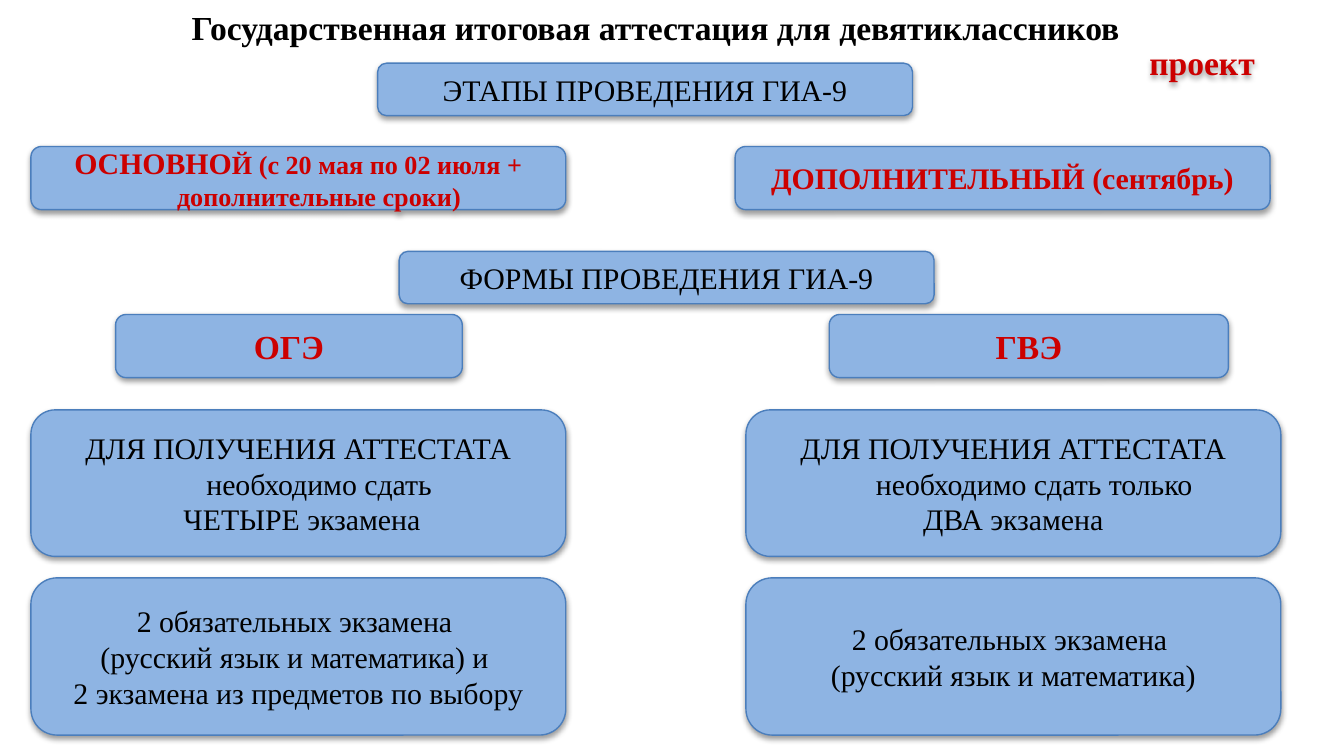
from dataclasses import dataclass

from lxml.etree import SubElement as Sub
from pptx import Presentation
from pptx.dml.color import RGBColor as Rgb
from pptx.enum.shapes import MSO_SHAPE as Kind
from pptx.enum.text import MSO_ANCHOR as Anchor, MSO_AUTO_SIZE as Fit, PP_ALIGN as Align
from pptx.oxml.ns import qn
from pptx.util import Inches, Pt


@dataclass(frozen=True)
class Theme:
    font: str = "Times New Roman"
    fill: Rgb = Rgb(0x8E, 0xB4, 0xE3)
    edge: Rgb = Rgb(0x4B, 0x7E, 0xBC)
    ink: Rgb = Rgb(0, 0, 0)
    red: Rgb = Rgb(0xCC, 0, 0)
    shade: str = "000000"
    small: int = 14
    body: int = 16
    head: int = 18


class Deck:
    def __init__(self, theme):
        self.theme = theme
        self.file = Presentation()
        self.file.slide_width = Inches(10)
        self.file.slide_height = Inches(10 * 9 / 16)
        self.slide = self.file.slides.add_slide(self.file.slide_layouts[5])

    def style(self, para, size, color, bold):
        para.alignment = Align.CENTER
        font = para.font
        font.name, font.size, font.bold = self.theme.font, Pt(size), bold
        font.color.rgb = color

    def title(self, text, *area):
        shape = self.slide.shapes.title
        shape.left, shape.top, shape.width, shape.height = map(Inches, area)
        frame = shape.text_frame
        frame.text = text
        frame.auto_size = Fit.NONE
        frame.vertical_anchor = Anchor.TOP
        self.style(frame.paragraphs[0], self.theme.head, self.theme.ink, True)

    def shadow(self, shape):
        """Give the shape a soft shadow straight below it."""
        shape.shadow.inherit = False
        effects = shape._element.spPr.find(qn("a:effectLst"))
        outer = Sub(effects, qn("a:outerShdw"), blurRad=str(Pt(3.1)),
                    dist=str(Pt(1.6)), dir="5400000", rotWithShape="0")
        color = Sub(outer, qn("a:srgbClr"), val=self.theme.shade)
        Sub(color, qn("a:alpha"), val="38000")

    def box(self, area, lines, size=None, strong=False, plain=False, tail=""):
        """Add a rounded box; tail is smaller text that ends the last line."""
        theme = self.theme
        shape = self.slide.shapes.add_shape(Kind.ROUNDED_RECTANGLE, *map(Inches, area))
        if plain:
            shape.fill.background()
            shape.line.fill.background()
        else:
            shape.fill.solid()
            shape.fill.fore_color.rgb = theme.fill
            shape.line.color.rgb = theme.edge
            shape.line.width = Pt(0.75)
        self.shadow(shape)
        frame = shape.text_frame
        frame.word_wrap = True
        frame.vertical_anchor = Anchor.MIDDLE
        frame.text = "\n".join(lines)
        for para in frame.paragraphs:
            self.style(para, size or theme.body, theme.red if strong else theme.ink, strong)
            props = para._p.get_or_add_pPr()
            props.set("marL", str(Inches(0.31)))
            props.set("indent", str(Inches(-0.31)))
        if tail:
            run = frame.paragraphs[-1].add_run()
            run.text = tail
            run.font.size = Pt(theme.small)


def main():
    theme = Theme()
    deck = Deck(theme)
    wide, low, mid = 3.98, 0.39, 0.47
    left, right = 0.23, 5.55

    deck.title("Государственная итоговая аттестация для девятиклассников", 0.31, 0, 9.14, 0.4)

    deck.box((2.81, 0.47, wide, low), ["ЭТАПЫ ПРОВЕДЕНИЯ ГИА-9"])
    deck.box((left, 1.09, wide, mid), ["ОСНОВНО"], strong=True,
             tail="Й (с 20 мая по 02 июля + дополнительные сроки)")
    deck.box((5.47, 1.09, wide, mid), ["ДОПОЛНИТЕЛЬНЫЙ (сентябрь)"], strong=True)

    deck.box((2.97, 1.87, wide, low), ["ФОРМЫ ПРОВЕДЕНИЯ ГИА-9"])
    for x, width, name in ((0.86, 2.58, "ОГЭ"), (6.17, 2.97, "ГВЭ")):
        deck.box((x, 2.34, width, mid), [name], theme.head, strong=True)

    need = "ДЛЯ ПОЛУЧЕНИЯ АТТЕСТАТА необходимо сдать"
    core = "2 обязательных экзамена "
    pair = "(русский язык и математика)"
    forms = (
        (left, [need, " ЧЕТЫРЕ экзамена"],
         [core, pair + " и ", "2 экзамена из предметов по выбору"]),
        (right, [need + " только", " ДВА экзамена "], [core, pair]),
    )
    for x, rule, exams in forms:
        deck.box((x, 3.05, wide, 1.09), rule)
        deck.box((x, 4.3, wide, 1.17), exams)

    deck.box((8.28, 0.31, 1.33, 0.31), ["проект"], theme.head, strong=True, plain=True)
    deck.file.save("out.pptx")


if __name__ == "__main__":
    main()
